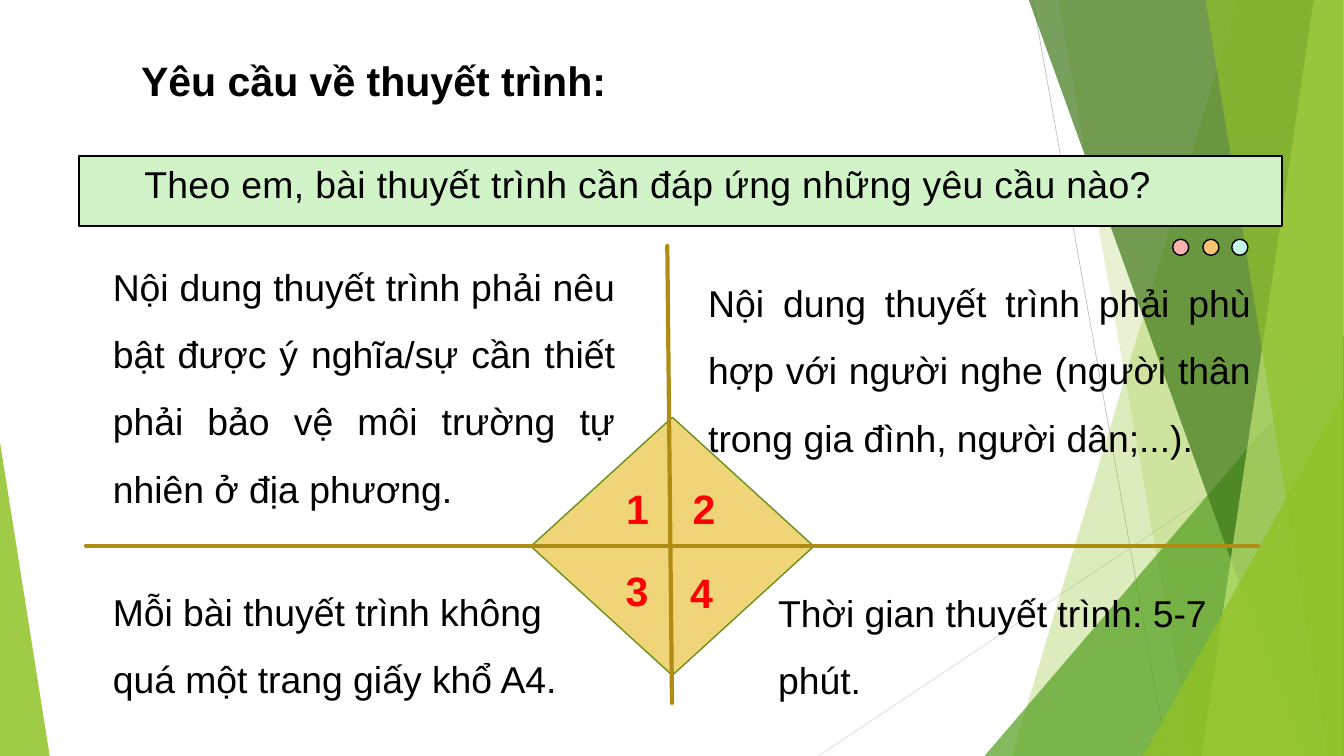
from typing import NamedTuple

import pptx
import pptx.dml.color
import pptx.enum.shapes
import pptx.enum.text
import pptx.oxml
import pptx.oxml.ns
import pptx.util

RGBColor = pptx.dml.color.RGBColor
SHAPE = pptx.enum.shapes.MSO_SHAPE
ALIGN = pptx.enum.text.PP_ALIGN
Pt = pptx.util.Pt

EMU_PER_PX = 9144
WIDTH, HEIGHT = 2000, 1125
FONT = "Arial"

BLACK = RGBColor(0x00, 0x00, 0x00)
RED = RGBColor(0xFF, 0x00, 0x00)
GRAY = RGBColor(0xBF, 0xBF, 0xBF)
LIGHT_GRAY = RGBColor(0xD9, 0xD9, 0xD9)
LIME = RGBColor(0x90, 0xC2, 0x26)
PALE_LIME = RGBColor(0xC0, 0xE4, 0x74)
GREEN = RGBColor(0x54, 0xA0, 0x21)
DARK_GREEN = RGBColor(0x3F, 0x78, 0x19)
MINT = RGBColor(0xD1, 0xF3, 0xC8)
AQUA = RGBColor(0xC3, 0xF7, 0xE7)
ORANGE = RGBColor(0xF9, 0xC3, 0x74)
PINK = RGBColor(0xF7, 0xB2, 0xB0)
SAND = RGBColor(0xF0, 0xD5, 0x78)
OLIVE = RGBColor(0x6B, 0x90, 0x1C)
GOLD = RGBColor(0xAF, 0x8C, 0x14)


class Box(NamedTuple):
    x: int
    y: int
    w: int
    h: int


class Band(NamedTuple):
    top_left: int
    bottom_left: int
    right: int
    color: RGBColor
    alpha: int


class Wedge(NamedTuple):
    box: Box
    apex: int
    color: RGBColor
    alpha: int


class Requirement(NamedTuple):
    text: str
    box: Box
    align: ALIGN
    number_x: int
    number_y: int


BANDS = [
    Band(1842, 1506, 1999, LIME, 30),
    Band(1575, 1774, 2000, LIME, 20),
]
FRONT_BANDS = [
    Band(1531, 1937, 1999, DARK_GREEN, 70),
    Band(1955, 1788, 1999, PALE_LIME, 70),
    Band(1794, 1976, 1999, LIME, 65),
]
BACK_WEDGE = Wedge(Box(1465, 500, 535, 625), 1, GREEN, 72)
FRONT_WEDGES = [
    Wedge(Box(1701, 589, 298, 536), 1, LIME, 80),
    Wedge(Box(0, 658, 74, 467), 0, LIME, 85),
]
DOTS = [(1745, PINK), (1790, ORANGE), (1833, AQUA)]
REQUIREMENTS = [
    Requirement("Nội dung thuyết trình phải nêu bật được ý nghĩa/sự cần thiết phải bảo vệ "
                "môi trường tự nhiên ở địa phương.",
                Box(158, 355, 767, 414), ALIGN.JUSTIFY, 922, 715),
    Requirement("Nội dung thuyết trình phải phù hợp với người nghe (người thân trong gia "
                "đình, người dân;...).",
                Box(1044, 379, 827, 301), ALIGN.JUSTIFY, 1021, 715),
    Requirement("Mỗi bài thuyết trình không quá một trang giấy khổ A4.",
                Box(158, 838, 700, 212), ALIGN.LEFT, 921, 836),
    Requirement("Thời gian thuyết trình: 5-7 phút.",
                Box(1148, 840, 724, 212), ALIGN.LEFT, 1017, 840),
]


def px(n: int) -> int:
    return n * EMU_PER_PX


def emu(box: Box) -> list[int]:
    return [px(n) for n in box]


def paint(sp, color: RGBColor, alpha: int = 100, line=None, width: float = 1.5) -> None:
    """Set fill, opacity and outline of a shape."""
    sp.shadow.inherit = False
    sp.fill.solid()
    sp.fill.fore_color.rgb = color
    if alpha < 100:
        clr = sp.fill._xPr.find(".//" + pptx.oxml.ns.qn("a:srgbClr"))
        clr.append(pptx.oxml.parse_xml(
            f'<a:alpha {pptx.oxml.ns.nsdecls("a")} val="{alpha * 1000}"/>'))
    if line is None:
        sp.line.fill.background()
    else:
        sp.line.color.rgb = line
        sp.line.width = Pt(width)


def add_preset(s, kind: SHAPE, box: Box):
    return s.shapes.add_shape(kind, *emu(box))


def add_band(s, band: Band) -> None:
    fb = s.shapes.build_freeform(band.top_left, 0, scale=EMU_PER_PX)
    fb.add_line_segments([(band.right, 0), (band.right, HEIGHT), (band.bottom_left, HEIGHT)])
    paint(fb.convert_to_shape(), band.color, band.alpha)


def add_wedge(s, wedge: Wedge) -> None:
    sp = add_preset(s, SHAPE.ISOSCELES_TRIANGLE, wedge.box)
    sp.adjustments[0] = wedge.apex
    paint(sp, wedge.color, wedge.alpha)


def add_line(s, x1: int, y1: int, x2: int, y2: int, color: RGBColor, width: float) -> None:
    kind = pptx.enum.shapes.MSO_CONNECTOR.STRAIGHT
    cn = s.shapes.add_connector(kind, px(x1), px(y1), px(x2), px(y2))
    cn.line.color.rgb = color
    cn.line.width = Pt(width)
    cn.line._ln.set("cap", "rnd")
    cn._element.spPr.append(
        pptx.oxml.parse_xml(f'<a:effectLst {pptx.oxml.ns.nsdecls("a")}/>'))


def write(tf, text: str, size: int, color: RGBColor = BLACK, bold: bool = False,
          align: ALIGN = ALIGN.LEFT, spacing=None, wrap: bool = True, inset=None):
    """Fill a text frame with one formatted paragraph and return it."""
    tf.word_wrap = wrap
    tf.auto_size = pptx.enum.text.MSO_AUTO_SIZE.NONE
    tf.vertical_anchor = pptx.enum.text.MSO_ANCHOR.TOP
    if inset is not None:
        tf.margin_left = tf.margin_right = tf.margin_top = tf.margin_bottom = inset
    p = tf.paragraphs[0]
    p.text = text
    p.alignment = align
    p.line_spacing = spacing
    p.font.name = FONT
    p.font.size = Pt(size)
    p.font.bold = bold
    p.font.color.rgb = color
    return p


def add_text(s, box: Box, text: str, size: int, **style):
    return write(s.shapes.add_textbox(*emu(box)).text_frame, text, size, **style)


def add_backdrop(s) -> None:
    add_line(s, 1537, 0, 1737, HEIGHT, GRAY, 0.75)
    add_line(s, 1999, 604, 1218, HEIGHT, LIGHT_GRAY, 0.75)
    for band in BANDS:
        add_band(s, band)
    add_wedge(s, BACK_WEDGE)
    for band in FRONT_BANDS:
        add_band(s, band)
    for wedge in FRONT_WEDGES:
        add_wedge(s, wedge)


def add_question(s) -> None:
    paint(add_preset(s, SHAPE.RECTANGLE, Box(117, 232, 1791, 104)), MINT, line=BLACK, width=2)
    p = add_text(s, Box(25, 273, 1689, 38), "Theo em, bài thuyết trình cần đáp ứng những yêu cầu nào?",
                 40, align=ALIGN.RIGHT, spacing=Pt(24.2), inset=0)
    p.runs[0].font._element.set("spc", "40")
    for x, color in DOTS:
        paint(add_preset(s, SHAPE.OVAL, Box(x, 356, 24, 24)), color, line=BLACK)


def add_requirements(s) -> None:
    for req in REQUIREMENTS:
        add_text(s, req.box, req.text, 40, align=req.align, spacing=1.5)
    paint(add_preset(s, SHAPE.DIAMOND, Box(790, 621, 421, 384)), SAND, line=OLIVE)
    add_line(s, 993, 366, 1000, 1046, GOLD, 4.5)
    add_line(s, 128, 812, 1872, 812, GOLD, 4.5)
    for number, req in enumerate(REQUIREMENTS, 1):
        add_text(s, Box(req.number_x, req.number_y, 55, 84), str(number), 44,
                 color=RED, bold=True, wrap=False)


def main() -> None:
    prs = pptx.Presentation()
    prs.slide_width, prs.slide_height = px(WIDTH), px(HEIGHT)
    s = prs.slides.add_slide(prs.slide_layouts[5])
    title = s.shapes.title
    title.left, title.top, title.width, title.height = emu(Box(164, 46, 785, 97))
    write(title.text_frame, "Yêu cầu về thuyết trình:", 44, bold=True,
          align=ALIGN.CENTER, spacing=1.5, inset=0)
    add_backdrop(s)
    add_question(s)
    add_requirements(s)
    prs.save("out.pptx")


if __name__ == "__main__":
    main()
